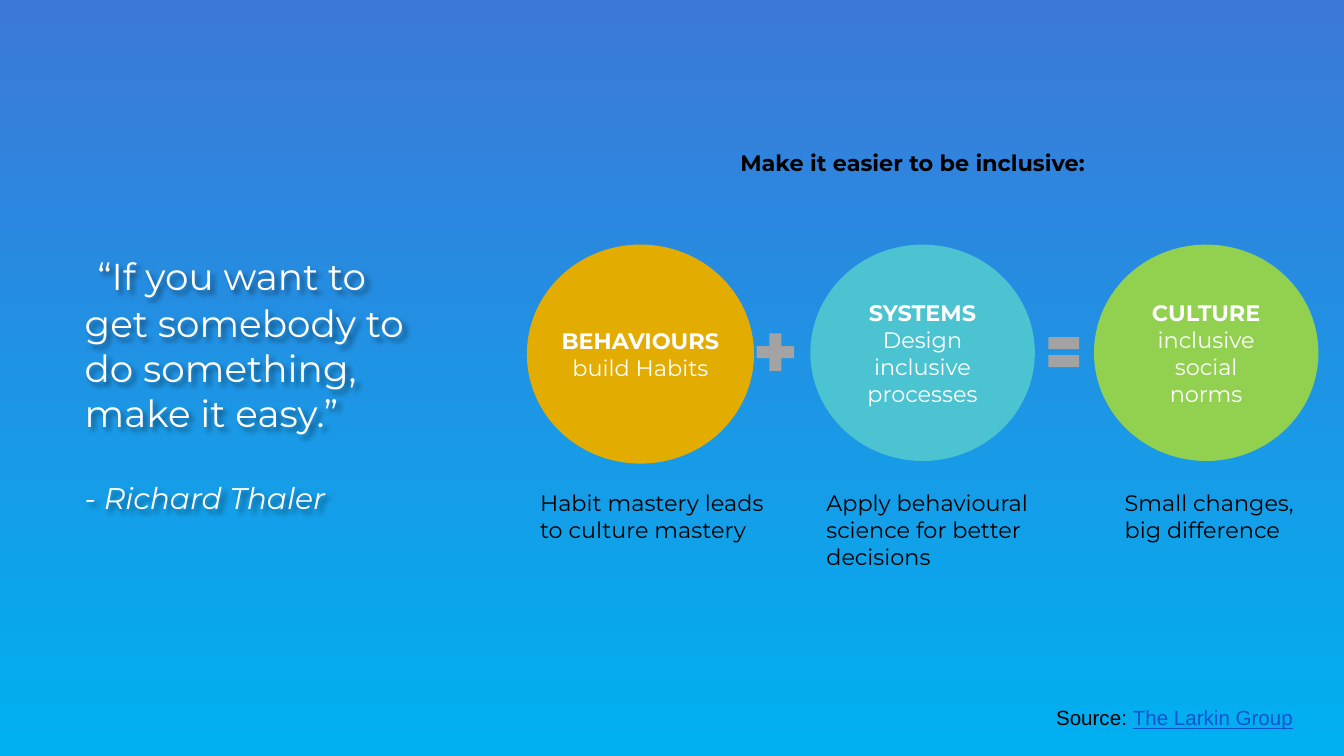
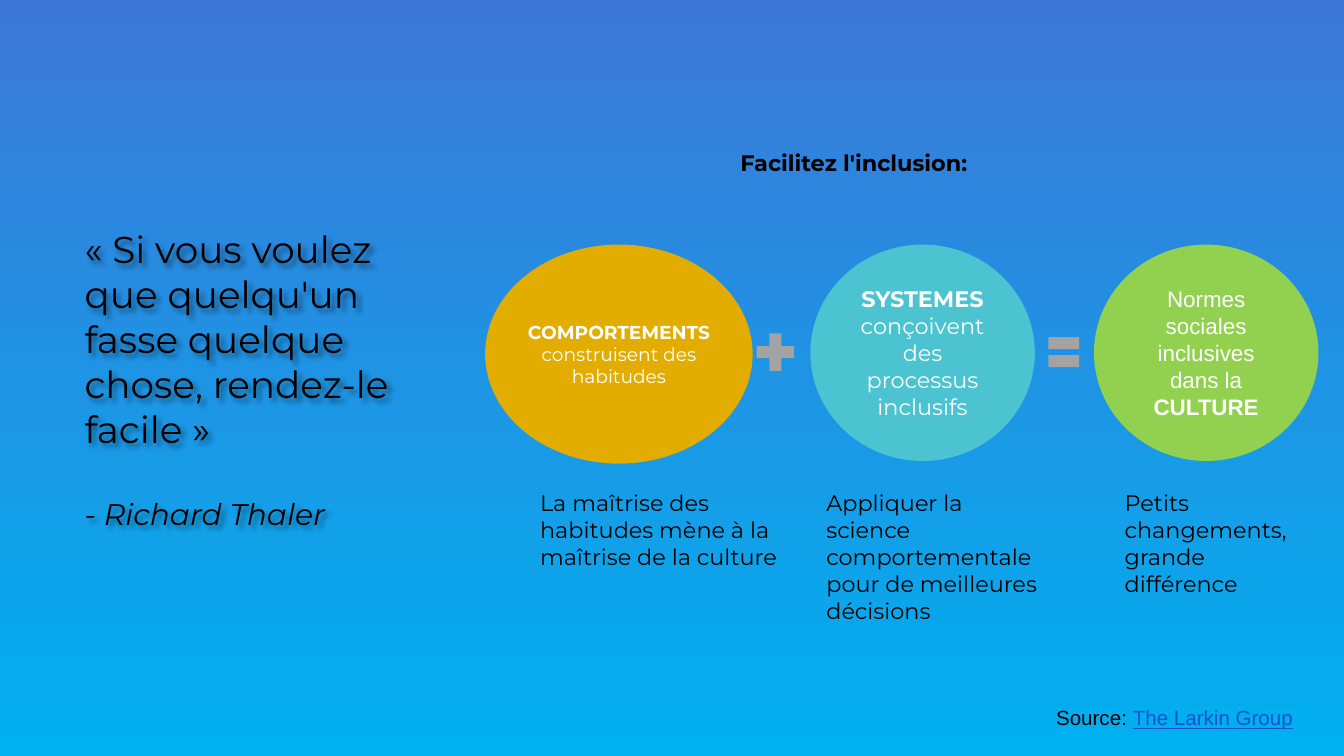
from lxml import etree
from pptx import Presentation
from pptx.dml.color import RGBColor
from pptx.enum.shapes import MSO_SHAPE
from pptx.enum.text import MSO_ANCHOR, PP_ALIGN
from pptx.oxml.ns import qn
from pptx.util import Inches, Pt

ELLIPSE, PLUS, EQUAL = MSO_SHAPE.OVAL, MSO_SHAPE.MATH_PLUS, MSO_SHAPE.MATH_EQUAL
MIDDLE, CENTER, LEFT = MSO_ANCHOR.MIDDLE, PP_ALIGN.CENTER, PP_ALIGN.LEFT

COLORS = {
    "sky_top": "3C78D8", "sky_bottom": "00B0F0",
    "behaviours": "E2AC00", "systems": "4CC3D0", "culture": "92D050",
    "operator": "A3A3A3", "white": "FFFFFF", "black": "000000", "link": "1155CC",
}
HEADING_FONT, SOURCE_FONT = "Montserrat", "Arial"

# Each circle: left, width, height, side inset, colour
CIRCLE_STYLES = [
    (3.92, 1.69, 1.63, 0, "behaviours"),
    (6.03, 1.67, 1.61, 0.1, "systems"),
    (8.14, 1.67, 1.61, 0.1, "culture"),
]
OPERATORS = [(PLUS, 5.58, 0.38, [0.235]), (EQUAL, 7.76, 0.31, [0.235, 0.118])]
# Each caption column: left, width
CAPTION_COLUMNS = [(3.92, 1.99), (6.05, 1.79), (8.27, 1.54)]

# Circle text: paragraphs of (text, bold) runs, with size and font
VERSIONS = [
    {
        "quote": [(" ", False), ("“If you want to get somebody to do something, make it easy.”", False)],
        "quote_color": "white", "quote_start_size": 26,
        "heading": "Make it easier to be inclusive:",
        "first_circle": (3.92, 1.69),
        "circles": [
            ([[("BEHAVIOURS", True)], [("build Habits", False)]], 12, HEADING_FONT),
            ([[("SYSTEMS", True), (" Design inclusive processes", False)]], 12, HEADING_FONT),
            ([[("CULTURE ", True), ("inclusive social norms", False)]], 12, HEADING_FONT),
        ],
        "captions": [
            ("Habit mastery leads to culture mastery", 0.5),
            ("Apply behavioural science for better decisions", 0.71),
            ("Small changes, big difference", 0.71),
        ],
    },
    {
        "quote": [("« Si vous voulez que quelqu'un fasse quelque chose, rendez-le facile »", False)],
        "quote_color": "black", "quote_start_size": 20,
        "heading": "Facilitez l'inclusion:",
        "first_circle": (3.61, 1.99),
        "circles": [
            ([[("COMPORTEMENTS", True)], [("construisent des habitudes", False)]], 10, HEADING_FONT),
            ([[("SYSTEMES ", True), ("conçoivent des processus inclusifs", False)]], 12, HEADING_FONT),
            ([[("Normes sociales inclusives dans la ", False), ("CULTURE", True)]], 12, SOURCE_FONT),
        ],
        "captions": [
            ("La maîtrise des habitudes mène à la maîtrise de la culture", 0.71),
            ("Appliquer la science comportementale pour de meilleures décisions", 1.11),
            ("Petits changements, grande différence", 0.91),
        ],
    },
]


def write(shape, paragraphs, size, color, font=HEADING_FONT, align=LEFT, side=0.1, edge=0.05):
    """Fill a shape with paragraphs of (text, bold) runs; return the paragraphs."""
    frame = shape.text_frame
    frame.word_wrap = True
    frame.margin_left = frame.margin_right = Inches(side)
    frame.margin_top = frame.margin_bottom = Inches(edge)
    for index, runs in enumerate(paragraphs):
        paragraph = frame.add_paragraph() if index else frame.paragraphs[0]
        paragraph.alignment = align
        paragraph.font.size = Pt(size)
        paragraph.font.name = font
        paragraph.font.color.rgb = RGBColor.from_string(COLORS[color])
        for text, bold in runs:
            run = paragraph.add_run()
            run.text = text
            run.font.bold = bold
    return frame.paragraphs


def add_solid(slide, preset, left, top, width, height, color):
    shape = slide.shapes.add_shape(preset, Inches(left), Inches(top), Inches(width), Inches(height))
    shape.shadow.inherit = False
    shape.fill.solid()
    shape.fill.fore_color.rgb = RGBColor.from_string(COLORS[color])
    shape.line.fill.background()
    return shape


prs = Presentation()
prs.slide_width, prs.slide_height = Inches(10), Inches(10 * 9 / 16)

sky = prs.slide_master.background.fill
sky.gradient()
sky.gradient_angle = 270
for stop, name in zip(sky.gradient_stops, ("sky_top", "sky_bottom")):
    stop.color.rgb = RGBColor.from_string(COLORS[name])

for version in VERSIONS:
    slide = prs.slides.add_slide(prs.slide_layouts[6])

    # Quote and its author, with soft text shadow
    quote = slide.shapes.add_textbox(Inches(0.63), Inches(1), Inches(2.48), Inches(3.64))
    quote.text_frame.vertical_anchor = MIDDLE
    saying, author = write(
        quote, [version["quote"], [("- Richard Thaler", False)]],
        20, version["quote_color"], side=0, edge=0)
    saying.runs[0].font.size = Pt(version["quote_start_size"])
    author.space_before = Pt(24)
    author.font.size = Pt(16)
    author.font.italic = True
    quote.shadow.inherit = False
    effects = quote._element.spPr.find(qn("a:effectLst"))
    shadow = etree.SubElement(effects, qn("a:outerShdw"), blurRad="38100", dist="38100", dir="2700000")
    shade = etree.SubElement(shadow, qn("a:srgbClr"), val=COLORS["black"])
    etree.SubElement(shade, qn("a:alpha"), val="43000")

    # Behaviours + systems = culture
    for index, (style, content) in enumerate(zip(CIRCLE_STYLES, version["circles"])):
        left, width, height, side, color = style
        if index == 0:
            left, width = version["first_circle"]
        paragraphs, size, font = content
        circle = add_solid(slide, ELLIPSE, left, 1.82, width, height, color)
        circle.text_frame.vertical_anchor = MIDDLE
        write(circle, paragraphs, size, "white", font, CENTER, side)

    for preset, left, width, adjustments in OPERATORS:
        operator = add_solid(slide, preset, left, 2.43, width, 0.38, "operator")
        for index, value in enumerate(adjustments):
            operator.adjustments[index] = value

    for (left, width), (text, height) in zip(CAPTION_COLUMNS, version["captions"]):
        caption = slide.shapes.add_textbox(Inches(left), Inches(3.59), Inches(width), Inches(height))
        write(caption, [[(text, False)]], 12, "black")

    heading = slide.shapes.add_textbox(Inches(5.41), Inches(1.06), Inches(2.87), Inches(0.3))
    write(heading, [[(version["heading"], True)]], 12, "black")

    source = slide.shapes.add_textbox(Inches(7.76), Inches(5.2), Inches(2.06), Inches(0.29))
    credit = write(source, [[("Source: ", False), ("The Larkin Group", False)]], 11, "black", SOURCE_FONT)
    publisher = credit[0].runs[1].font
    publisher.color.rgb = RGBColor.from_string(COLORS["link"])
    publisher.underline = True

prs.save("out.pptx")
